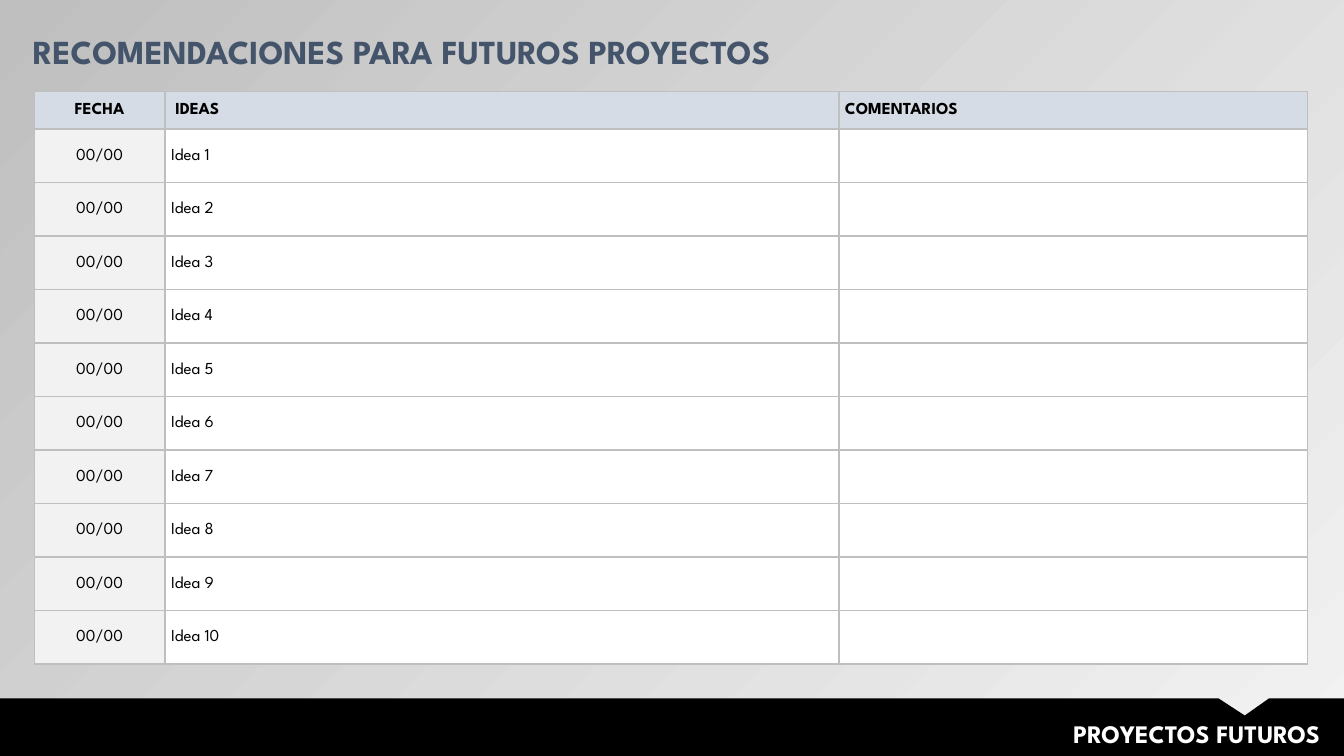
from lxml import etree
from pptx import Presentation
from pptx.dml.color import RGBColor
from pptx.enum.text import MSO_ANCHOR, MSO_AUTO_SIZE, PP_ALIGN
from pptx.oxml.ns import qn
from pptx.util import Cm, Pt

LEFT, CENTER, RIGHT = PP_ALIGN.LEFT, PP_ALIGN.CENTER, PP_ALIGN.RIGHT
TOP, MIDDLE = MSO_ANCHOR.TOP, MSO_ANCHOR.MIDDLE
NO_AUTOFIT = MSO_AUTO_SIZE.NONE
TITLE_ONLY = 5
FONT = "League Spartan"
COLORS = {
    "light": "F2F2F2",
    "gray": "BFBFBF",
    "header": "D6DCE5",
    "title": "44546A",
    "white": "FFFFFF",
    "black": "000000",
}
HEADERS = ["FECHA", "IDEAS", "COMENTARIOS"]
IDEAS = [["00/00", f"Idea {number}", ""] for number in range(1, 11)]
COLUMN_SHARES = [1.3, 6.69, 4.65]
HEADER_HEIGHT = Cm(0.95)


def color(name):
    return RGBColor.from_string(COLORS[name])


def format_paragraph(paragraph, size, color_name, bold, alignment=LEFT):
    paragraph.alignment = alignment
    paragraph.font.name = FONT
    paragraph.font.size = Pt(size)
    paragraph.font.bold = bold
    paragraph.font.color.rgb = color(color_name)


def paint_background(slide):
    fill = slide.background.fill
    fill.gradient()
    fill.gradient_angle = 135
    for stop, name, position in zip(fill.gradient_stops, ["light", "gray"], [0.0, 1.0]):
        stop.color.rgb = color(name)
        stop.position = position


def add_title(slide, left, top, width, height):
    title = slide.shapes.title
    title.left, title.top, title.width, title.height = left, top, width, height
    frame = title.text_frame
    frame.text = "RECOMENDACIONES PARA FUTUROS PROYECTOS"
    frame.auto_size = NO_AUTOFIT
    frame.vertical_anchor = TOP
    frame.margin_left = frame.margin_right = Cm(0.3)
    frame.margin_top = frame.margin_bottom = Cm(0.15)
    paragraph = frame.paragraphs[0]
    format_paragraph(paragraph, 24, "title", True)
    paragraph.line_spacing = 1.2
    paragraph.space_before = Pt(4.8)


def add_borders(cell):
    properties = cell._tc.get_or_add_tcPr()
    for side in ("a:lnL", "a:lnR", "a:lnT", "a:lnB"):
        line = etree.SubElement(properties, qn(side), w=str(Pt(1)))
        fill = etree.SubElement(line, qn("a:solidFill"))
        etree.SubElement(fill, qn("a:srgbClr"), val=COLORS["gray"])


def format_cell(cell, text, fill_name, bold, alignment):
    add_borders(cell)
    cell.fill.solid()
    cell.fill.fore_color.rgb = color(fill_name)
    cell.vertical_anchor = MIDDLE
    cell.margin_left = cell.margin_right = Cm(0.15)
    cell.margin_top = cell.margin_bottom = 0
    cell.text = text
    paragraph = cell.text_frame.paragraphs[0]
    format_paragraph(paragraph, 12, "black", bold, alignment)
    paragraph.line_spacing = 1.07


def add_ideas_table(slide, left, top, width, height):
    rows = [HEADERS] + IDEAS
    frame = slide.shapes.add_table(len(rows), len(HEADERS), left, top, width, height)
    table = frame.table
    table.first_row = table.horz_banding = False
    for column, share in zip(table.columns, COLUMN_SHARES):
        column.width = int(width * share / sum(COLUMN_SHARES))
    for row_index, texts in enumerate(rows):
        is_header = row_index == 0
        table.rows[row_index].height = (
            HEADER_HEIGHT if is_header else (height - HEADER_HEIGHT) // len(IDEAS)
        )
        for column_index, text in enumerate(texts):
            is_date = column_index == 0
            fill_name = "header" if is_header else "light" if is_date else "white"
            alignment = CENTER if is_date else LEFT
            format_cell(table.cell(row_index, column_index), text, fill_name, is_header, alignment)
    table.cell(0, 1).margin_left = Cm(0.26)


def add_footer(slide, left, top, width, height):
    """Draw the notched band and its section name."""
    right, bottom = left + width, top + height
    builder = slide.shapes.build_freeform(left, top)
    builder.add_line_segments([
        (right - Cm(3.16), top),
        (right - Cm(2.5), top + Cm(0.43)),
        (right - Cm(1.89), top),
        (right, top),
        (right, bottom),
        (left, bottom),
    ])
    band = builder.convert_to_shape()
    band.shadow.inherit = False
    band.fill.solid()
    band.fill.fore_color.rgb = color("black")
    band.line.fill.background()

    label_width = Cm(23)
    label = slide.shapes.add_textbox(
        right - Cm(0.35) - label_width, top + Cm(0.38), label_width, Cm(1.02)
    )
    frame = label.text_frame
    frame.word_wrap = True
    frame.text = "PROYECTOS FUTUROS"
    format_paragraph(frame.paragraphs[0], 18, "white", True, RIGHT)


def main():
    presentation = Presentation()
    presentation.slide_width, presentation.slide_height = Cm(33.87), Cm(19.05)
    slide = presentation.slides.add_slide(presentation.slide_layouts[TITLE_ONLY])
    paint_background(slide)
    add_footer(slide, 0, Cm(17.6), presentation.slide_width, Cm(1.45))
    add_ideas_table(slide, Cm(0.86), Cm(2.3), Cm(32.09), Cm(14.43))
    add_title(slide, Cm(0.53), Cm(0.43), Cm(19.4), Cm(1.45))
    presentation.save("out.pptx")


if __name__ == "__main__":
    main()
